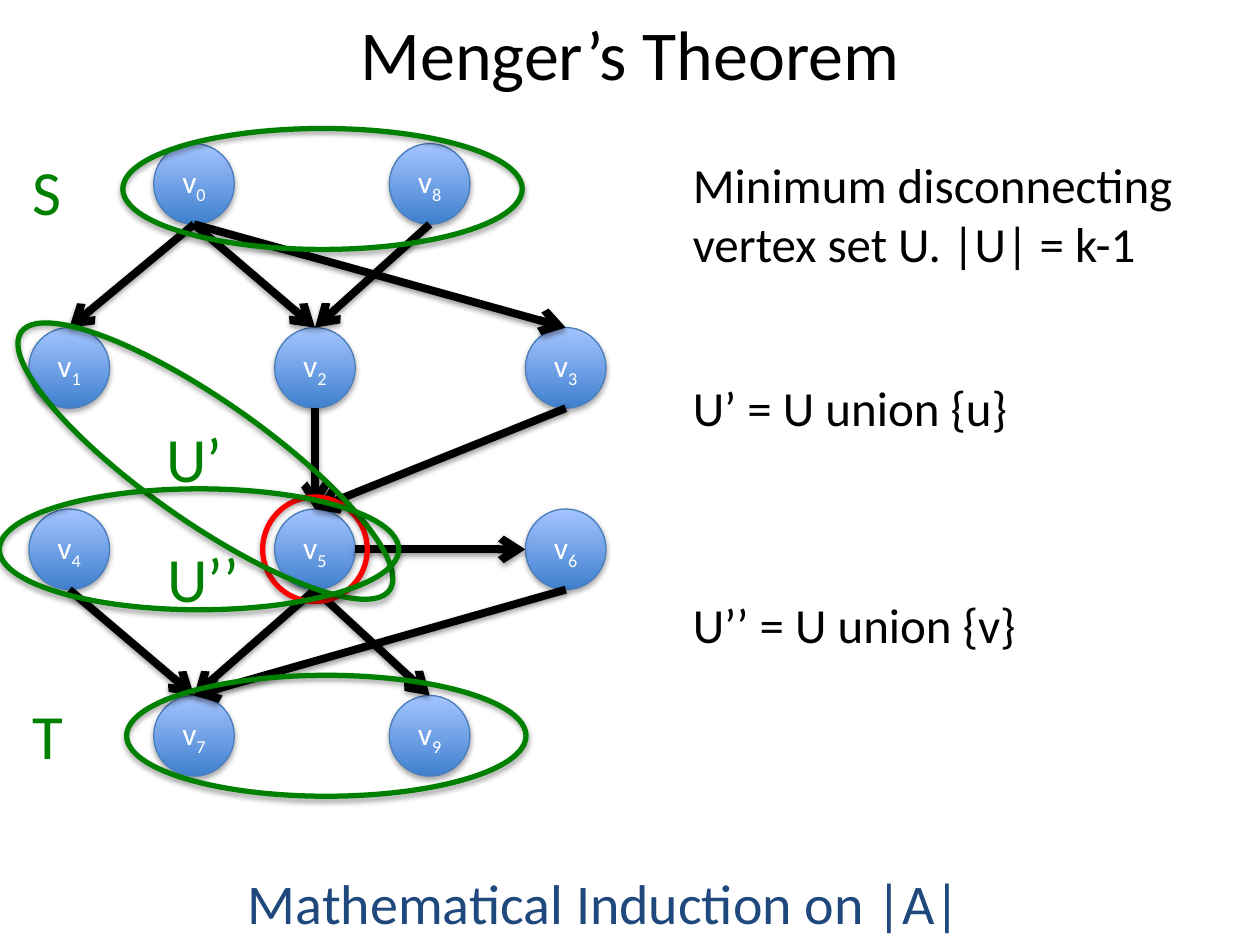
from lxml import etree
from pptx import Presentation
from pptx.dml.color import RGBColor
from pptx.enum.shapes import MSO_CONNECTOR, MSO_SHAPE
from pptx.enum.text import MSO_ANCHOR, MSO_AUTO_SIZE, PP_ALIGN
from pptx.oxml.ns import qn
from pptx.util import Inches, Pt

OVAL = MSO_SHAPE.OVAL
STRAIGHT = MSO_CONNECTOR.STRAIGHT
MIDDLE = MSO_ANCHOR.MIDDLE
CENTER = PP_ALIGN.CENTER
FIT_SHAPE = MSO_AUTO_SIZE.SHAPE_TO_FIT_TEXT
TITLE_ONLY = 5

BLACK, WHITE, GREEN, RED, NAVY = "000000", "FFFFFF", "008000", "FF0000", "1F497D"
VERTEX_DARK, VERTEX_LIGHT, VERTEX_LINE = "3F80CE", "A4C4FF", "4B7EBC"

COLUMNS, ROWS = 100, 75
RADIUS = 3.2

VERTICES = {
    "8": (34.1, 14.6), "0": (15.4, 14.6),
    "1": (5.5, 29.2), "2": (25, 29.2), "3": (44.9, 29.2),
    "4": (5.5, 43.6), "5": (25, 43.6), "6": (44.9, 43.6),
    "9": (34.1, 58.4), "7": (15.4, 58.4),
}
EDGES = ["01", "47", "02", "25", "57", "56", "82", "03", "67", "35", "59"]


def color(hex_string):
    return RGBColor.from_string(hex_string)


class GraphSlide:
    font_name = "Calibri"

    def __init__(self, presentation):
        self.slide = presentation.slides.add_slide(presentation.slide_layouts[TITLE_ONLY])
        self.column = presentation.slide_width / COLUMNS
        self.row = presentation.slide_height / ROWS

    def place(self, left, top, width, height):
        return (round(left * self.column), round(top * self.row),
                round(width * self.column), round(height * self.row))

    def format_text(self, text_frame, size, hex_string, alignment=None):
        for paragraph in text_frame.paragraphs:
            paragraph.alignment = alignment
            for run in paragraph.runs:
                run.font.name = self.font_name
                run.font.size = Pt(size)
                run.font.color.rgb = color(hex_string)

    def outline(self, shape, hex_string, width):
        shape.line.color.rgb = color(hex_string)
        shape.line.width = Pt(width)

    def cast_shadow(self, shape, opacity, distance):
        effects = etree.SubElement(shape._element.spPr, qn("a:effectLst"))
        shadow = etree.SubElement(
            effects, qn("a:outerShdw"), blurRad=str(Pt(3.15)),
            dist=str(Pt(distance)), dir="5400000", rotWithShape="0")
        shade = etree.SubElement(shadow, qn("a:srgbClr"), val=BLACK)
        etree.SubElement(shade, qn("a:alpha"), val=str(opacity * 1000))

    def title(self, text, left, top, width, height):
        title = self.slide.shapes.title
        title.left, title.top, title.width, title.height = self.place(left, top, width, height)
        title.text_frame.text = text
        title.text_frame.vertical_anchor = MIDDLE
        self.format_text(title.text_frame, 40, BLACK, CENTER)

    def oval(self, x, y, width, height):
        return self.slide.shapes.add_shape(
            OVAL, *self.place(x - width / 2, y - height / 2, width, height))

    def vertex(self, index):
        shape = self.oval(*VERTICES[index], 2 * RADIUS, 2 * RADIUS)
        shape.fill.gradient()
        shape.fill.gradient_angle = 90
        for stop, hex_string in zip(shape.fill.gradient_stops, (VERTEX_DARK, VERTEX_LIGHT)):
            stop.color.rgb = color(hex_string)
        self.outline(shape, VERTEX_LINE, 0.75)
        self.cast_shadow(shape, 35, 1.8)
        text_frame = shape.text_frame
        text_frame.text = "v"
        text_frame.vertical_anchor = MIDDLE
        subscript = text_frame.paragraphs[0].add_run()
        subscript.text = index
        self.format_text(text_frame, 18, WHITE, CENTER)
        subscript.font._element.set("baseline", "-25000")

    def edge(self, start, end):
        start_x, start_y = VERTICES[start]
        end_x, end_y = VERTICES[end]
        if start_y == end_y:
            start_x, end_x = start_x + RADIUS, end_x - RADIUS
        else:
            start_y, end_y = start_y + RADIUS, end_y - RADIUS
        connector = self.slide.shapes.add_connector(
            STRAIGHT, *self.place(start_x, start_y, end_x, end_y))
        self.outline(connector, BLACK, 4.5)
        line = connector._element.spPr.find(qn("a:ln"))
        etree.SubElement(line, qn("a:tailEnd"), type="arrow")
        self.cast_shadow(connector, 38, 1.6)

    def ring(self, x, y, width, height, hex_string=GREEN, rotation=0):
        shape = self.oval(x, y, width, height)
        shape.rotation = rotation
        shape.fill.background()
        self.outline(shape, hex_string, 3)
        self.cast_shadow(shape, 35, 1.8)

    def text(self, text, left, top, width, height, size, hex_string, wrap=False):
        box = self.slide.shapes.add_textbox(*self.place(left, top, width, height))
        box.text_frame.text = text
        box.text_frame.word_wrap = wrap
        box.text_frame.auto_size = FIT_SHAPE
        self.format_text(box.text_frame, size, hex_string)

    def set_label(self, text, left, top):
        self.text(text, left, top, 13.8, 7.1, 36, GREEN, wrap=True)

    def statement(self, text, top, width, height=5.7):
        self.text(text, 54, top, width, height, 28, BLACK)


def main():
    presentation = Presentation()
    presentation.slide_width = Inches(10)
    presentation.slide_height = Inches(7.5)
    graph = GraphSlide(presentation)

    graph.title("Menger’s Theorem", 5, 0.6, 90, 7.1)
    for index in VERTICES:
        graph.vertex(index)
    for start, end in EDGES:
        graph.edge(start, end)

    graph.ring(25.9, 58.4, 31.7, 9.6)
    graph.ring(25.6, 15, 31.7, 9.6)
    graph.set_label("T", 1.6, 54.8)
    graph.set_label("S", 1.6, 11.6)
    graph.ring(*VERTICES["5"], 8.3, 8.3, RED)
    graph.ring(16.3, 36.6, 35.7, 9.6, rotation=35)
    graph.set_label("U’", 12.2, 32.8)
    graph.ring(15.8, 43.6, 31.7, 9.6)
    graph.set_label("U’’", 12.3, 42.3)

    graph.statement("Minimum disconnecting\nvertex set U. |U| = k-1", 11.8, 43.1, 10.4)
    graph.statement("U’ = U union {u}", 29.5, 29.5)
    graph.statement("U’’ = U union {v}", 46.7, 30.2)
    graph.text("Mathematical Induction on |A|", 18.7, 68.4, 61, 6.4, 32, NAVY)

    presentation.save("out.pptx")


if __name__ == "__main__":
    main()
